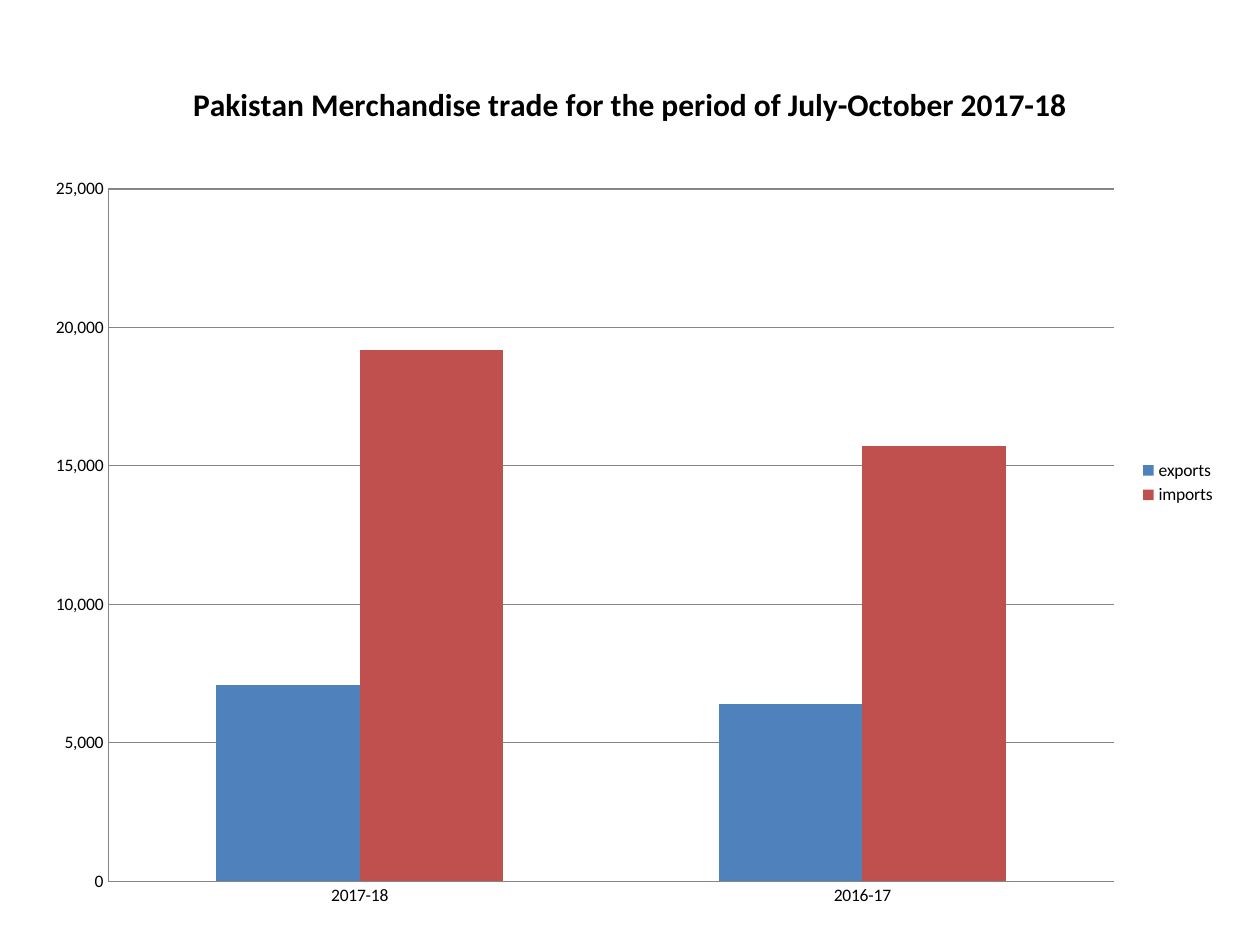
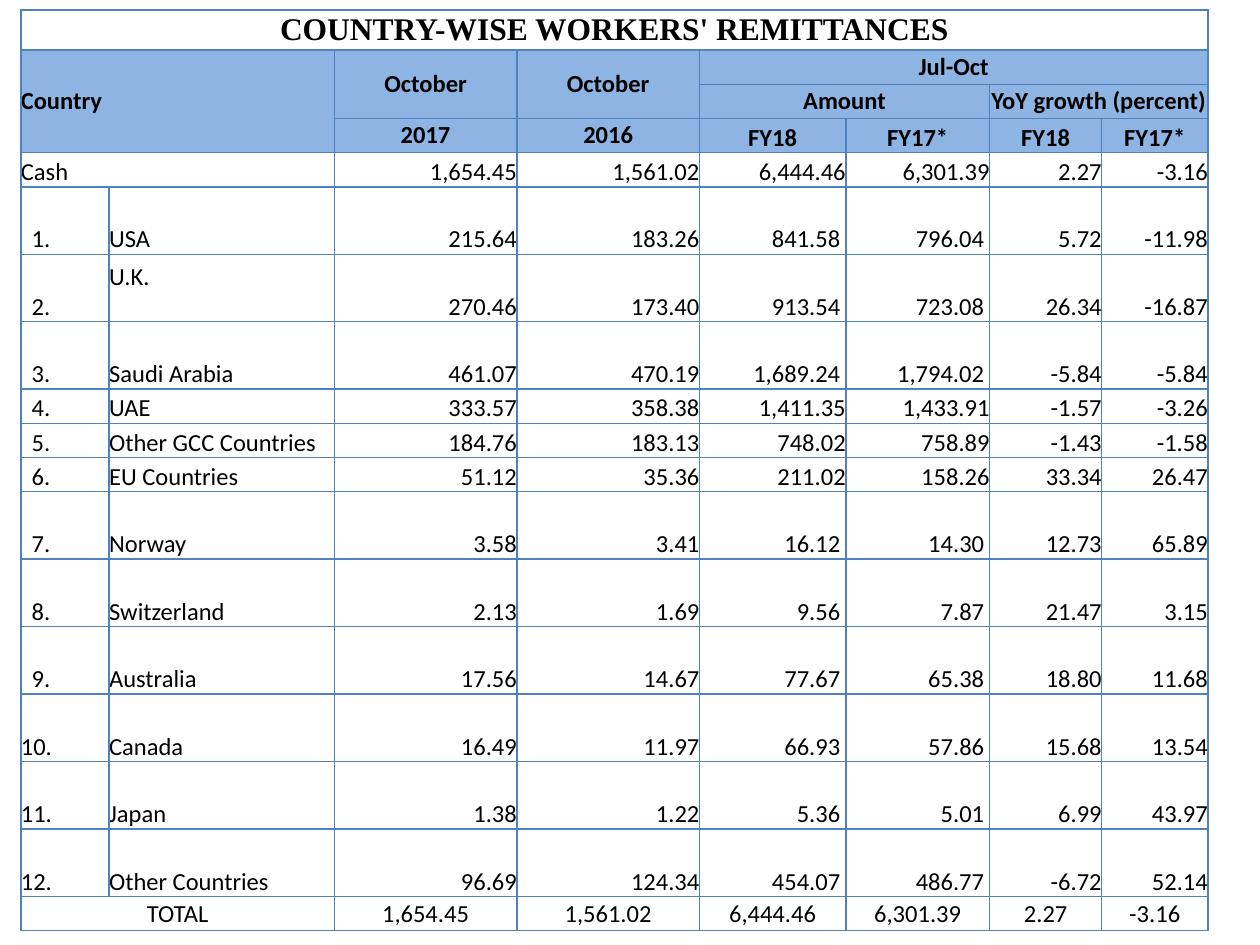
from lxml import etree
from pptx import Presentation
from pptx.chart.data import CategoryChartData
from pptx.dml.color import RGBColor
from pptx.enum.chart import XL_CHART_TYPE as ChartType
from pptx.enum.chart import XL_LEGEND_POSITION as LegendPos
from pptx.enum.chart import XL_TICK_MARK as Tick
from pptx.enum.text import MSO_ANCHOR as Anchor
from pptx.enum.text import PP_ALIGN as Align
from pptx.oxml import parse_xml
from pptx.oxml.ns import nsdecls, qn
from pptx.util import Cm, Pt

BLACK = RGBColor(0x00, 0x00, 0x00)
BLUE = RGBColor(0x4F, 0x81, 0xBD)
RED = RGBColor(0xC0, 0x50, 0x4D)
GREY = RGBColor(0x86, 0x86, 0x86)
HEADER = RGBColor(0x8E, 0xB4, 0xE3)
FONT = "Calibri"
TITLE_FONT = "Times New Roman"


def style_font(font, size, bold=False, name=FONT):
    font.name = name
    font.size = Pt(size)
    font.bold = bold
    font.color.rgb = BLACK


def set_layout(parent, after, **places):
    old = parent.find(qn("c:layout"))
    if old is not None:
        parent.remove(old)
    layout = parse_xml(f"<c:layout {nsdecls('c')}><c:manualLayout/></c:layout>")
    for tag, val in places.items():
        etree.SubElement(layout[0], qn(f"c:{tag}")).set("val", str(val))
    if after is None:
        parent.insert(0, layout)
    else:
        parent.find(qn(after)).addnext(layout)


prs = Presentation()
prs.slide_width = Cm(25.4)
prs.slide_height = Cm(19.05)
blank = prs.slide_layouts[6]

s = prs.slides.add_slide(blank)
data = CategoryChartData(number_format="#,##0")
data.categories = ["2017-18", "2016-17"]
data.add_series("exports", [7100, 6400])
data.add_series("imports", [19200, 15700])
chart = s.shapes.add_chart(ChartType.COLUMN_CLUSTERED, Cm(0.64), Cm(0.84),
                           Cm(24.13), Cm(17.78), data).chart
style_font(chart.font, 10)

chart.has_title = True
p = chart.chart_title.text_frame.paragraphs[0]
r = p.add_run()
r.text = "Pakistan Merchandise trade for the period of July-October 2017-18"
style_font(r.font, 18, True)
chart.chart_title.include_in_layout = False
set_layout(chart.chart_title._element, "c:tx",
           xMode="edge", yMode="edge", x=0.13, y=0.04)

chart.has_legend = True
chart.legend.position = LegendPos.RIGHT
chart.legend.include_in_layout = False

plot = chart.plots[0]
plot.gap_width = 150
plot.overlap = 0
plot.vary_by_categories = False
for series, color in zip(plot.series, (BLUE, RED)):
    series.format.fill.solid()
    series.format.fill.fore_color.rgb = color
set_layout(chart._chartSpace.chart.plotArea, None, layoutTarget="inner",
           xMode="edge", yMode="edge", x=0.064, y=0.167, w=0.84, h=0.785)

value_axis = chart.value_axis
value_axis.minimum_scale = 0
value_axis.maximum_scale = 25000
value_axis.major_unit = 5000
value_axis.has_major_gridlines = True
value_axis.major_gridlines.format.line.color.rgb = GREY
value_axis.tick_labels.number_format = "#,##0"
value_axis.tick_labels.number_format_is_linked = False
for axis in (value_axis, chart.category_axis):
    axis.major_tick_mark = Tick.NONE
    axis.minor_tick_mark = Tick.NONE
    axis.format.line.color.rgb = GREY

s = prs.slides.add_slide(blank)
rows = [
    ["COUNTRY-WISE WORKERS' REMITTANCES"] + [""] * 7,
    ["Country", "", "October", "October", "Jul-Oct", "", "", ""],
    ["", "", "", "", "Amount", "", "YoY growth (percent)", ""],
    ["", "", "2017", "2016", "FY18", "FY17*", "FY18", "FY17*"],
    ["Cash", "", "1,654.45", "1,561.02", "6,444.46", "6,301.39", "2.27", "-3.16"],
    ["1.", "USA", "215.64", "183.26", "841.58", "796.04", "5.72", "-11.98"],
    ["2.", "U.K.", "270.46", "173.40", "913.54", "723.08", "26.34", "-16.87"],
    ["3.", "Saudi Arabia", "461.07", "470.19", "1,689.24", "1,794.02", "-5.84", "-5.84"],
    ["4.", "UAE", "333.57", "358.38", "1,411.35", "1,433.91", "-1.57", "-3.26"],
    ["5.", "Other GCC Countries", "184.76", "183.13", "748.02", "758.89", "-1.43", "-1.58"],
    ["6.", "EU Countries", "51.12", "35.36", "211.02", "158.26", "33.34", "26.47"],
    ["7.", "Norway", "3.58", "3.41", "16.12", "14.30", "12.73", "65.89"],
    ["8.", "Switzerland", "2.13", "1.69", "9.56", "7.87", "21.47", "3.15"],
    ["9.", "Australia", "17.56", "14.67", "77.67", "65.38", "18.80", "11.68"],
    ["10.", "Canada", "16.49", "11.97", "66.93", "57.86", "15.68", "13.54"],
    ["11.", "Japan", "1.38", "1.22", "5.36", "5.01", "6.99", "43.97"],
    ["12.", "Other Countries", "96.69", "124.34", "454.07", "486.77", "-6.72", "52.14"],
    ["TOTAL", "", "1,654.45", "1,561.02", "6,444.46", "6,301.39", "2.27", "-3.16"],
]
widths = [1.78, 4.54, 3.68, 3.68, 2.95, 2.9, 2.26, 2.14]
tall_rows = [5, 6, 7, *range(11, 17)]
total_row = len(rows) - 1
heights = [1.36 if i in tall_rows else 0.69 for i in range(len(rows))]
heights[0] = 0.81
merges = [(0, 0, 0, 7), (1, 0, 3, 1), (1, 2, 2, 2), (1, 3, 2, 3), (1, 4, 1, 7),
          (2, 4, 2, 5), (2, 6, 2, 7), (4, 0, 4, 1), (total_row, 0, total_row, 1)]

table = s.shapes.add_table(len(rows), len(widths), Cm(0.42), Cm(0.2),
                           Cm(sum(widths)), Cm(sum(heights))).table
table.first_row = False
table.horz_banding = False
for column, width in zip(table.columns, widths):
    column.width = Cm(width)
for row, height in zip(table.rows, heights):
    row.height = Cm(height)

for i, texts in enumerate(rows):
    is_header = 1 <= i <= 3
    for j, text in enumerate(texts):
        cell = table.cell(i, j)
        cell.margin_left = cell.margin_right = 0
        cell.margin_top = cell.margin_bottom = 0
        cell.text = text
        p = cell.text_frame.paragraphs[0]
        if i == 0:
            style_font(p.font, 18, True, TITLE_FONT)
        else:
            style_font(p.font, 14, is_header)

        if i in (0, total_row) or (is_header and j > 1):
            p.alignment = Align.CENTER
        else:
            p.alignment = Align.RIGHT if j > 1 else Align.LEFT
        if i < 3 or i == total_row or (i == 3 and j < 4):
            cell.vertical_anchor = Anchor.MIDDLE
        else:
            cell.vertical_anchor = Anchor.BOTTOM
        if j == 0 and 5 <= i <= 13:
            cell.margin_left = Cm(0.22)
        if j in (4, 5) and i in tall_rows:
            cell.margin_right = Cm(0.11)
        if text == "U.K.":
            cell.margin_bottom = Cm(0.6)

        if is_header:
            cell.fill.solid()
            cell.fill.fore_color.rgb = HEADER
        else:
            cell.fill.background()
        tcPr = cell._tc.get_or_add_tcPr()
        for k, side in enumerate(("lnL", "lnR", "lnT", "lnB")):
            tcPr.insert(k, parse_xml(
                f'<a:{side} {nsdecls("a")} w="12700"><a:solidFill>'
                f'<a:srgbClr val="{BLUE}"/></a:solidFill></a:{side}>'))

for top, left, bottom, right in merges:
    table.cell(top, left).merge(table.cell(bottom, right))

prs.save("out.pptx")
